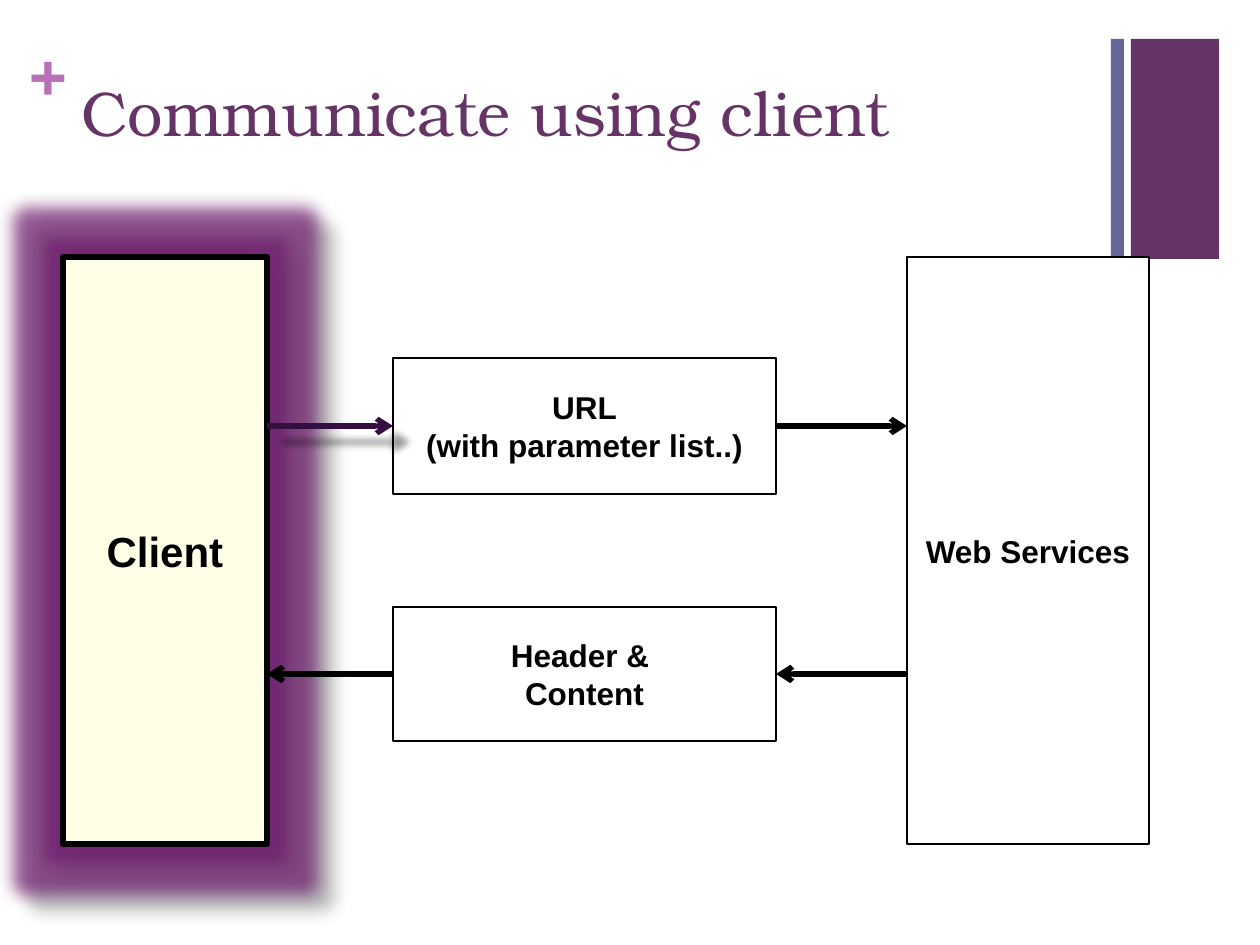
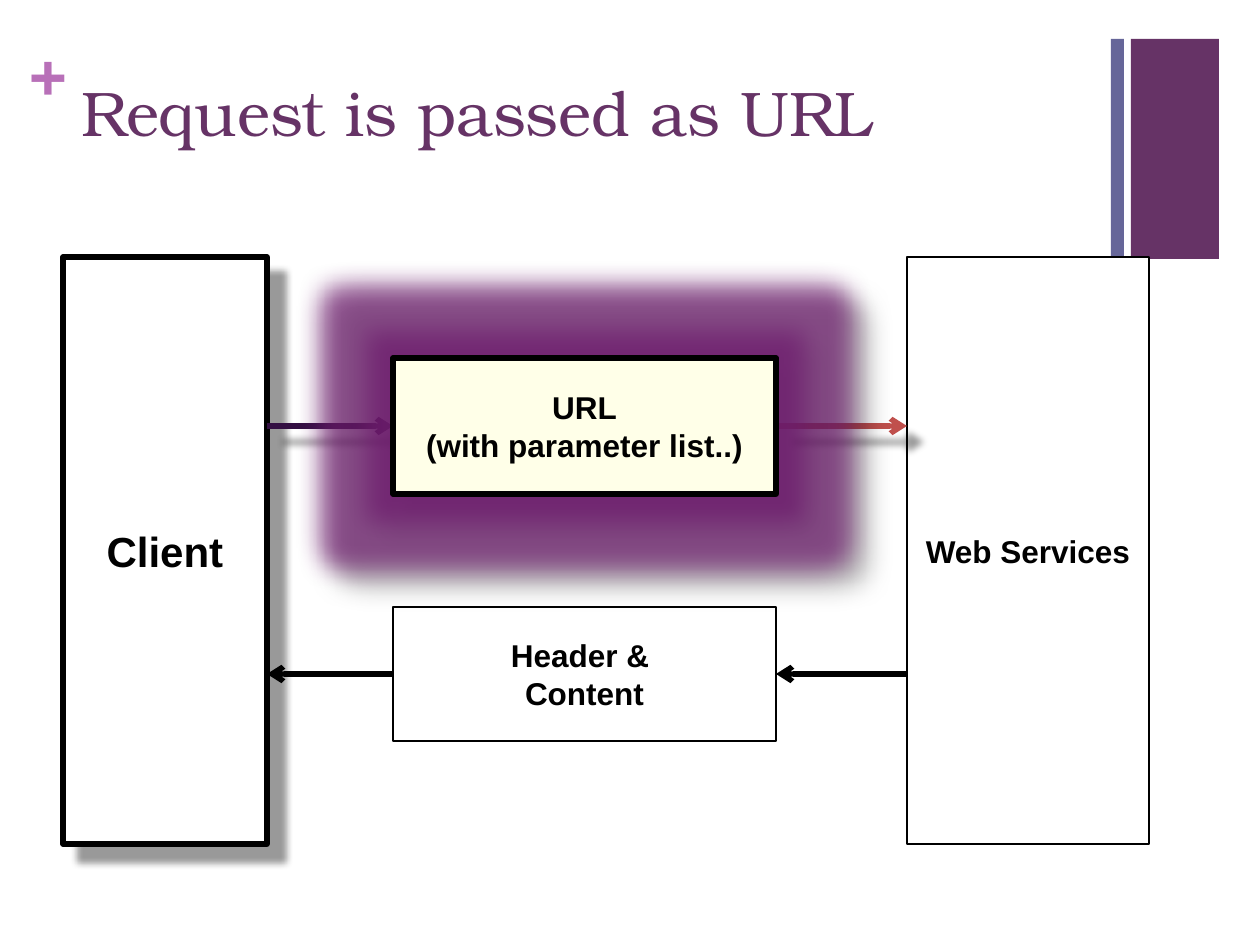
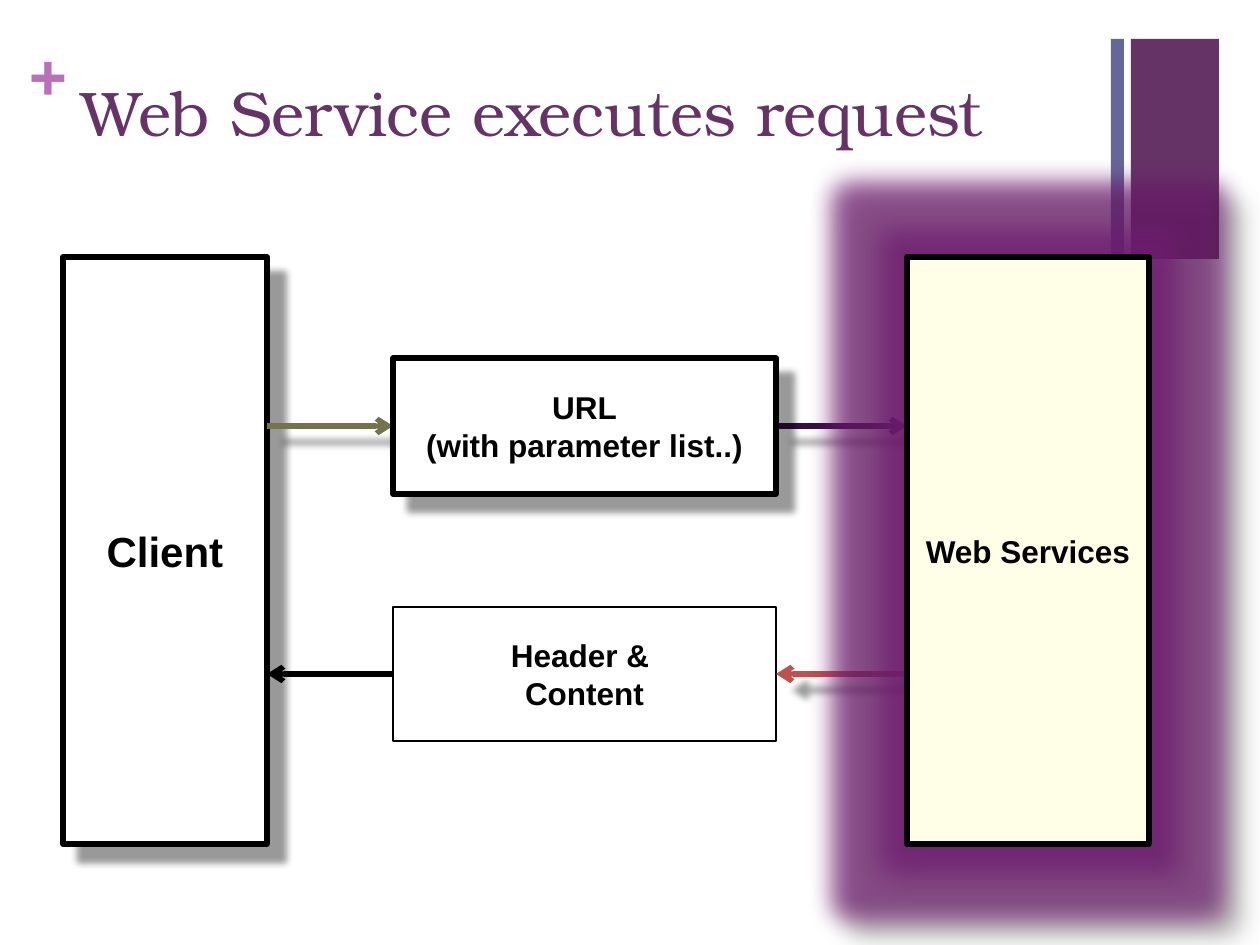
from lxml.etree import SubElement
from pptx import Presentation
from pptx.dml.color import RGBColor
from pptx.enum.shapes import MSO_CONNECTOR, MSO_SHAPE
from pptx.enum.text import MSO_ANCHOR, PP_ALIGN
from pptx.oxml.ns import qn
from pptx.util import Emu, Pt

COLOURS = {
    "plum": "663366", "slate": "666699", "orchid": "B870B8",
    "black": "000000", "white": "FFFFFF", "cream": "FFFFE8",
    "violet": "330F42", "red": "C0504D", "olive": "73734D", "glow": "6E1C6E",
}
SERIF, SANS = "TeX Gyre Bonum", "Arial"
TOP, BOTTOM = 257, 844
CLIENT_LEFT, CLIENT_RIGHT = 63, 267
WEB_LEFT, WEB_RIGHT = 907, 1149
MIDDLE_LEFT, MIDDLE_WIDTH = 393, 383
URL_Y, REPLY_Y = 426, 674
LEFT_SIDE, RIGHT_SIDE = 1, 3

BOXES = {
    "client": (CLIENT_LEFT, TOP, CLIENT_RIGHT - CLIENT_LEFT, BOTTOM - TOP, 24, ["Client"]),
    "url": (MIDDLE_LEFT, 358, MIDDLE_WIDTH, 136, 18, ["URL", "(with parameter list..)"]),
    "reply": (MIDDLE_LEFT, 607, MIDDLE_WIDTH, 134, 18, ["Header & ", "Content"]),
    "web": (WEB_LEFT, TOP, WEB_RIGHT - WEB_LEFT, BOTTOM - TOP, 18, ["Web Services"]),
}
ARROWS = {
    "client to url": (CLIENT_RIGHT, MIDDLE_LEFT, URL_Y, "url", LEFT_SIDE),
    "url to web": (MIDDLE_LEFT + MIDDLE_WIDTH, WEB_LEFT, URL_Y, "url", RIGHT_SIDE),
    "web to reply": (WEB_LEFT, MIDDLE_LEFT + MIDDLE_WIDTH, REPLY_Y, "reply", RIGHT_SIDE),
    "reply to client": (MIDDLE_LEFT, CLIENT_RIGHT, REPLY_Y, "reply", LEFT_SIDE),
}
STEPS = [
    {"title": "Communicate using client", "active": "client", "glow": 18,
     "visited": [], "raised": [],
     "arrows": {"client to url": "violet"}},
    {"title": "Request is passed as URL", "active": "url", "glow": 28,
     "visited": ["client"], "raised": ["url"],
     "arrows": {"client to url": "violet", "url to web": "red"}},
    {"title": "Web Service executes request", "active": "web", "glow": 28,
     "visited": ["client", "url"], "raised": ["url", "web"],
     "arrows": {"client to url": "olive", "url to web": "violet", "web to reply": "red"}},
]


def px(n):
    """Turn pixels into EMU."""
    return Emu(round(n * 914400 / 126))


def rgb(name):
    """Look up a colour by name."""
    return RGBColor.from_string(COLOURS[name])


def add_effect_colour(effect, colour, opacity):
    """Give an effect its colour and opacity in percent."""
    clr = SubElement(effect, qn("a:srgbClr"), val=COLOURS[colour])
    SubElement(clr, qn("a:alpha"), val=str(opacity * 1000))


def set_effects(shape, shadow=False, glow=0):
    """Set the glow and shadow of a shape or connector, or none."""
    effects = SubElement(shape.element.spPr, qn("a:effectLst"))
    if glow:
        add_effect_colour(SubElement(effects, qn("a:glow"), rad=str(Pt(glow))), "glow", 70)
    if shadow:
        outer = SubElement(effects, qn("a:outerShdw"), blurRad=str(Pt(4)), dist=str(Pt(13)),
                           dir="2700000", algn="tl", rotWithShape="0")
        add_effect_colour(outer, "black", 40)


def write(tf, lines, size, font, colour, bold=False, align=PP_ALIGN.LEFT):
    """Write one paragraph per line in a single format."""
    for i, line in enumerate(lines):
        p = tf.paragraphs[0] if i == 0 else tf.add_paragraph()
        p.alignment = align
        r = p.add_run()
        r.text = line
        for key, value in {"size": Pt(size), "name": font, "bold": bold}.items():
            setattr(r.font, key, value)
        r.font.color.rgb = rgb(colour)


def add_rect(s, x, y, w, h, fill, line=0, **effects):
    """Add a filled rectangle, outlined in black when line is given."""
    sp = s.shapes.add_shape(MSO_SHAPE.RECTANGLE, px(x), px(y), px(w), px(h))
    sp.fill.solid()
    sp.fill.fore_color.rgb = rgb(fill)
    if line:
        sp.line.color.rgb = rgb("black")
        sp.line.width = Pt(line)
    else:
        sp.line.fill.background()
    set_effects(sp, **effects)
    return sp


def add_label(s, x, y, w, h, text, colour, bold=False, **frame):
    """Add a serif text box."""
    tf = s.shapes.add_textbox(px(x), px(y), px(w), px(h)).text_frame
    for key, value in {"word_wrap": True, **frame}.items():
        setattr(tf, key, value)
    write(tf, [text], 36, SERIF, colour, bold)


def add_box(s, name, step):
    """Add a box of the diagram in its state for this step."""
    x, y, w, h, size, lines = BOXES[name]
    active = name == step["active"]
    reached = active or name in step["visited"]
    sp = add_rect(s, x, y, w, h, "cream" if active else "white", 3 if reached else 1,
                  shadow=reached, glow=step["glow"] if active else 0)
    sp.text_frame.word_wrap = True
    sp.text_frame.vertical_anchor = MSO_ANCHOR.MIDDLE
    write(sp.text_frame, lines, size, SANS, "black", True, PP_ALIGN.CENTER)
    return sp


def add_arrow(s, name, step, boxes):
    """Add an arrow joined to the box in the middle column."""
    start, end, y, box, side = ARROWS[name]
    c = s.shapes.add_connector(MSO_CONNECTOR.STRAIGHT, px(start), px(y), px(end), px(y))
    leaves_box = start in (MIDDLE_LEFT, MIDDLE_LEFT + MIDDLE_WIDTH)
    join = c.begin_connect if leaves_box else c.end_connect
    join(boxes[box], side)
    c.line.color.rgb = rgb(step["arrows"].get(name, "black"))
    c.line.width = Pt(3)
    SubElement(c.line._get_or_add_ln(), qn("a:tailEnd"), type="arrow")
    set_effects(c, shadow=name in step["arrows"])


def add_frame(s, title):
    """Add the bands, plus sign and title that every slide has."""
    add_rect(s, 1131, 39, 88, 220, "plum")
    add_label(s, 30, 32, 37, 77, "+", "orchid", True,
              margin_left=0, margin_top=0, margin_right=0, margin_bottom=0)
    add_rect(s, 1111, 39, 13, 220, "slate")
    add_label(s, 69, 67, 1041, 154, title, "plum")


def add_step(prs, step):
    """Add the slide for one step of the exchange."""
    s = prs.slides.add_slide(prs.slide_layouts[6])
    add_frame(s, step["title"])
    boxes = {name: add_box(s, name, step) for name in BOXES}
    for name in ARROWS:
        add_arrow(s, name, step, boxes)
    for name in step["raised"]:
        s.shapes.element.append(boxes[name].element)


def main():
    """Build the slides and save them."""
    prs = Presentation()
    prs.slide_width, prs.slide_height = px(1260), px(945)
    for step in STEPS:
        add_step(prs, step)
    prs.save("out.pptx")


if __name__ == "__main__":
    main()
